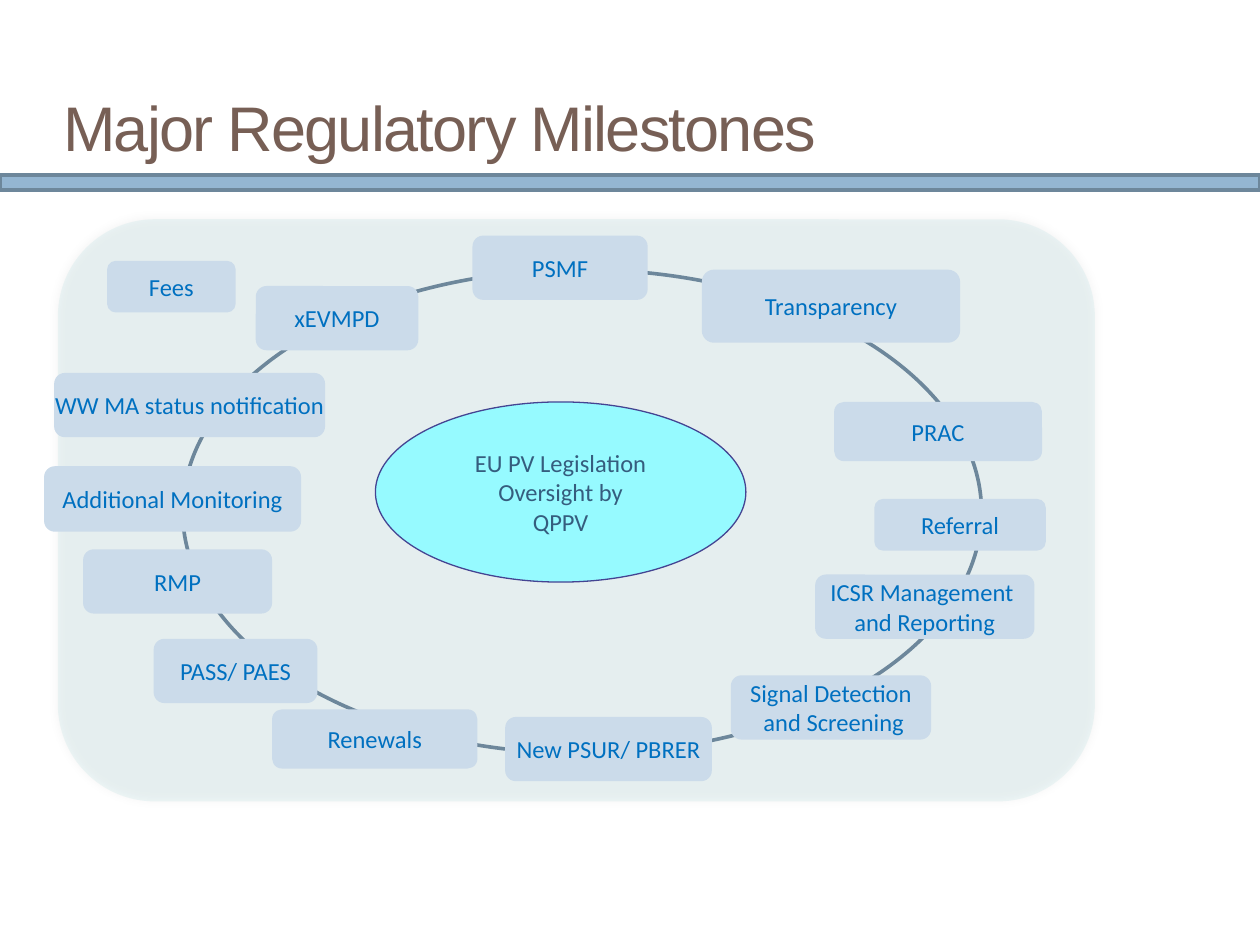
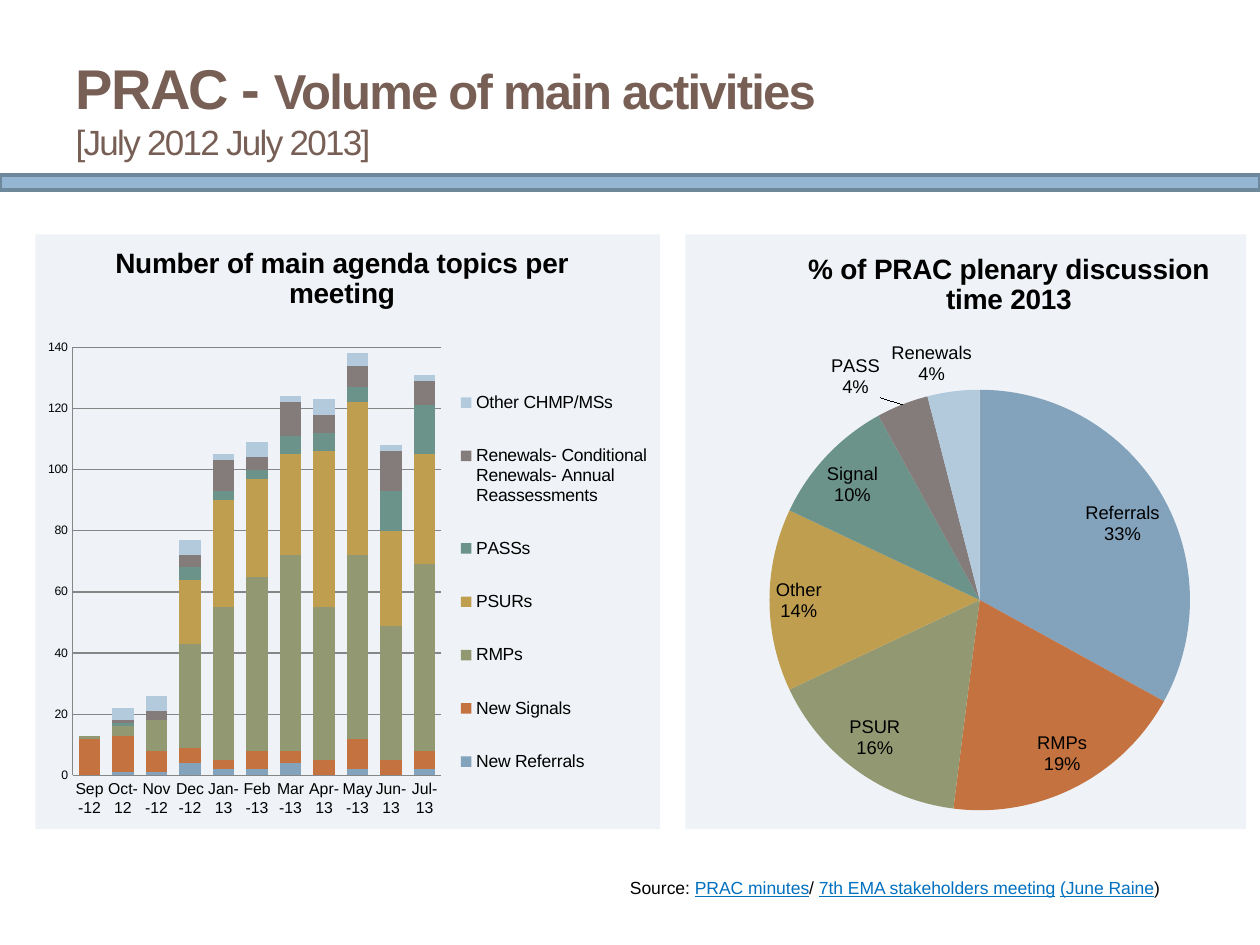
"""Build two slides on regulatory milestones and PRAC activity volumes."""
import pptx
import pptx.chart.data
import pptx.dml.color
import pptx.enum.chart
import pptx.enum.shapes
import pptx.enum.text
import pptx.oxml
import pptx.oxml.ns
import pptx.util

Inches = pptx.util.Inches
Pt = pptx.util.Pt
SHAPES = pptx.enum.shapes.MSO_SHAPE
ALIGN = pptx.enum.text.PP_ALIGN
ANCHOR = pptx.enum.text.MSO_ANCHOR

COLORS = {
    "band": "94B6D2", "band_line": "6D879B", "title": "775F55",
    "panel": "BBE0E3", "hub": "96FAFF", "hub_line": "444492",
    "hub_text": "355D7E", "milestone": "CBDBEA", "link": "0070C0",
    "black": "000000", "chart": "EFF3F7", "grid": "868686",
}
SERIES_COLORS = ["83A2BB", "C4723F", "929972", "BF9E50", "6C9389", "847B7B", "B3CADD"]

MILESTONES = [
    ("Transparency", 5.57, 2.14, 2.05, 0.58),
    ("PRAC", 6.62, 3.19, 1.65, 0.47),
    ("New PSUR/ PBRER", 4.01, 5.69, 1.64, 0.51),
    ("PASS/ PAES", 1.22, 5.07, 1.3, 0.51),
    ("PSMF", 3.75, 1.87, 1.39, 0.51),
    ("Renewals", 2.16, 5.63, 1.63, 0.47),
    ("RMP", 0.66, 4.36, 1.5, 0.51),
    ("Referral", 6.94, 3.96, 1.36, 0.41),
    ("Signal Detection\n and Screening", 5.8, 5.36, 1.59, 0.51),
    ("xEVMPD", 2.03, 2.27, 1.29, 0.51),
    ("Additional Monitoring", 0.35, 3.7, 2.04, 0.52),
    ("ICSR Management \nand Reporting", 6.47, 4.56, 1.74, 0.51),
    ("Fees", 0.85, 2.07, 1.02, 0.41),
    ("WW MA status notification", 0.43, 2.96, 2.15, 0.51),
]

MEETINGS = ["Sep-12", "Oct-12", "Nov-12", "Dec-12", "Jan-13", "Feb-13",
            "Mar-13", "Apr-13", "May-13", "Jun-13", "Jul-13"]
AGENDA_TOPICS = {
    "New Referrals": [0, 1, 1, 4, 2, 2, 4, 0, 2, 0, 2],
    "New Signals": [12, 12, 7, 5, 3, 6, 4, 5, 10, 5, 6],
    "RMPs": [1, 3, 10, 34, 50, 57, 64, 50, 60, 44, 61],
    "PSURs": [0, 0, 0, 21, 35, 32, 33, 51, 50, 31, 36],
    "PASSs": [0, 1, 0, 4, 3, 3, 6, 6, 5, 13, 16],
    "Renewals- Conditional Renewals- Annual Reassessments":
        [0, 1, 3, 4, 10, 4, 11, 6, 7, 13, 8],
    "Other CHMP/MSs": [0, 4, 5, 5, 2, 5, 2, 5, 4, 2, 2],
}
DISCUSSION_TOPICS = ["Referrals", "RMPs", "PSUR", "Other", "Signal", "PASS", "Renewals"]
DISCUSSION_SHARES = {"Series 1": [33, 19, 16, 14, 10, 4, 4]}


def rgb(value):
    """Return a colour from its name or its hex string."""
    return pptx.dml.color.RGBColor.from_string(COLORS.get(value, value))


def xml(markup):
    """Parse markup that uses the drawing and chart prefixes."""
    tag, rest = markup[:-1].split(">", 1) if ">" in markup[:-1] else (markup[:-2], None)
    names = pptx.oxml.ns.nsdecls("a", "c")
    return pptx.oxml.parse_xml(f"{tag} {names}/>" if rest is None else f"{tag} {names}>{rest}>")


def add_span(para, text, size=14, font="Arial", color="black", bold=False,
             underline=False, spacing=0):
    """Add one formatted run of text to a paragraph."""
    span = para.add_run()
    span.text = text
    span.font.size = Pt(size)
    span.font.name = font
    span.font.bold = bold
    span.font.underline = underline
    span.font.color.rgb = rgb(color)
    if spacing:
        span._r.get_or_add_rPr().set("spc", str(spacing * 100))


def add_box(slide, kind, place, fill=None, line=None, width=0.75):
    """Add a preset shape with plain fill and outline."""
    box = slide.shapes.add_shape(kind, *map(Inches, place))
    box.shadow.inherit = False
    if fill:
        box.fill.solid()
        box.fill.fore_color.rgb = rgb(fill)
    else:
        box.fill.background()
    if line:
        box.line.color.rgb = rgb(line)
        box.line.width = Pt(width)
    else:
        box.line.fill.background()
    return box


def add_label(box, text, color):
    """Write centred lines into a shape."""
    frame = box.text_frame
    frame.word_wrap = False
    frame.vertical_anchor = ANCHOR.MIDDLE
    for index, line in enumerate(text.split("\n")):
        para = frame.add_paragraph() if index else frame.paragraphs[0]
        para.alignment = ALIGN.CENTER
        add_span(para, line, font="Calibri", color=color)


def add_band(deck, layout):
    """Put the blue band on the layout that the slides share."""
    slide = deck.slides[0]
    band = add_box(slide, SHAPES.RECTANGLE, (0, 1.39, 10, 0.12), "band", "band_line", 2.08)
    layout.shapes._spTree.insert(2, band._element)


def set_title(slide, place, lines):
    """Place the title and write its lines of (text, size, bold) spans."""
    title = slide.shapes.title
    title.left, title.top, title.width, title.height = map(Inches, place)
    title.text_frame.auto_size = pptx.enum.text.MSO_AUTO_SIZE.NONE
    title.text_frame.vertical_anchor = ANCHOR.MIDDLE
    para = title.text_frame.paragraphs[0]
    para.alignment = ALIGN.LEFT
    for index, line in enumerate(lines):
        if index:
            para.add_line_break()
        for text, size, bold in line:
            add_span(para, text, size=size, bold=bold, color="title", spacing=-1)


def add_panel(slide):
    """Add the translucent panel with its soft shadow."""
    panel = add_box(slide, SHAPES.ROUNDED_RECTANGLE, (0.46, 1.74, 8.23, 4.62), "panel")
    properties = panel._element.spPr
    fill = properties.find(pptx.oxml.ns.qn("a:solidFill"))
    fill[0].append(xml('<a:alpha val="24000"/>'))
    effects = properties.find(pptx.oxml.ns.qn("a:effectLst"))
    effects.append(xml(
        '<a:outerShdw blurRad="76200" dist="0" dir="18900000">'
        '<a:srgbClr val="000000"><a:alpha val="20000"/></a:srgbClr></a:outerShdw>'))


def set_layout(element, index, x, y, w=None, h=None, inner=False):
    """Give a chart part a manual layout in fractions of the chart."""
    for old in element.findall(pptx.oxml.ns.qn("c:layout")):
        element.remove(old)
    target = '<c:layoutTarget val="inner"/>' if inner else ""
    modes = '<c:xMode val="edge"/><c:yMode val="edge"/>'
    sizes = [("x", x), ("y", y), ("w", w), ("h", h)]
    values = "".join(f'<c:{key} val="{value}"/>' for key, value in sizes if value is not None)
    element.insert(index, xml(
        f"<c:layout><c:manualLayout>{target}{modes}{values}</c:manualLayout></c:layout>"))


def add_chart(slide, kind, place, categories, series, title, title_at, plot_at):
    """Add a chart with its title, background and plot position."""
    data = pptx.chart.data.CategoryChartData()
    data.categories = categories
    for name, values in series.items():
        data.add_series(name, values)
    chart = slide.shapes.add_chart(kind, *map(Inches, place), data).chart
    chart.font.size = Pt(14)
    chart.font.name = "Arial"
    chart.font.color.rgb = rgb("black")
    chart.has_title = True
    add_span(chart.chart_title.text_frame.paragraphs[0], title, size=16, bold=True)
    set_layout(chart.chart_title._element, 1, *title_at)
    space = chart._chartSpace
    set_layout(space.chart.plotArea, 0, *plot_at, inner=True)
    space.chart.addnext(xml(
        f'<c:spPr><a:solidFill><a:srgbClr val="{COLORS["chart"]}"/></a:solidFill>'
        "<a:ln><a:noFill/></a:ln></c:spPr>"))
    return chart


def paint(parts):
    """Fill series or points with the chart colours in order."""
    for part, color in zip(parts, SERIES_COLORS):
        part.format.fill.solid()
        part.format.fill.fore_color.rgb = rgb(color)


def add_agenda_chart(slide):
    """Add the stacked columns of agenda topics."""
    chart = add_chart(
        slide, pptx.enum.chart.XL_CHART_TYPE.COLUMN_STACKED, (0.28, 1.86, 4.96, 4.72),
        MEETINGS, AGENDA_TOPICS, "Number of main agenda topics per meeting",
        (0.12, 0.01), (0.06, 0.19, 0.59, 0.72))
    plot = chart.plots[0]
    plot.gap_width = 55
    plot.overlap = 100
    paint(plot.series)
    for axis, size in ((chart.category_axis, 9), (chart.value_axis, 7)):
        axis.major_tick_mark = pptx.enum.chart.XL_TICK_MARK.NONE
        axis.minor_tick_mark = pptx.enum.chart.XL_TICK_MARK.NONE
        axis.tick_labels.font.size = Pt(size)
        axis.format.line.color.rgb = rgb("grid")
    chart.category_axis._element.txPr.bodyPr.set("rot", "0")
    values = chart.value_axis
    values.minimum_scale, values.maximum_scale, values.major_unit = 0, 140, 20
    values.major_gridlines.format.line.color.rgb = rgb("grid")
    chart.has_legend = True
    chart.legend.position = pptx.enum.chart.XL_LEGEND_POSITION.RIGHT
    chart.legend.include_in_layout = False
    chart.legend.font.size = Pt(10)
    set_layout(chart.legend._element, 1, 0.67, 0.21, 0.32, 0.75)


def add_discussion_chart(slide):
    """Add the pie of plenary discussion time."""
    chart = add_chart(
        slide, pptx.enum.chart.XL_CHART_TYPE.PIE, (5.44, 1.86, 4.45, 4.72),
        DISCUSSION_TOPICS, DISCUSSION_SHARES, "% of PRAC plenary discussion time 2013",
        (0.21, 0.02), (0.15, 0.26, 0.75, 0.71))
    chart.has_legend = False
    plot = chart.plots[0]
    paint([plot.series[0].points[index] for index in range(len(DISCUSSION_TOPICS))])
    plot.has_data_labels = True
    labels = plot.data_labels
    labels.show_value = False
    labels.show_category_name = True
    labels.show_percentage = True
    labels.number_format = "0%"
    labels.number_format_is_linked = False
    labels.position = pptx.enum.chart.XL_LABEL_POSITION.BEST_FIT
    labels.font.size = Pt(10.5)
    labels.font.color.rgb = rgb("black")


def add_source(slide):
    """Add the source line under the charts."""
    box = slide.shapes.add_textbox(Inches(5), Inches(6.96), Inches(5.23), Inches(0.36))
    frame = box.text_frame
    frame.word_wrap = False
    frame.margin_left = frame.margin_top = frame.margin_right = frame.margin_bottom = 0
    spans = ["Source: ", "PRAC minutes", "/ ", "7th EMA stakeholders meeting", " ",
             "(June Raine", ")"]
    for index, text in enumerate(spans):
        linked = index % 2 == 1
        add_span(frame.paragraphs[0], text, size=10,
                 color="link" if linked else "black", underline=linked)


def build_milestones(slide):
    """Fill the slide with the ring of milestones."""
    set_title(slide, (0.4, 0.57, 9.1, 0.87), [[("Major Regulatory Milestones", 36, False)]])
    add_panel(slide)
    add_box(slide, SHAPES.OVAL, (1.45, 2.14, 6.34, 3.84), line="band_line", width=2.08)
    hub = add_box(slide, SHAPES.OVAL, (2.98, 3.19, 2.94, 1.43), "hub", "hub_line")
    add_label(hub, "EU PV Legislation\nOversight by\nQPPV", "hub_text")
    for text, *place in MILESTONES:
        add_label(add_box(slide, SHAPES.ROUNDED_RECTANGLE, place, "milestone"), text, "link")


def build_activities(slide):
    """Fill the slide with the two charts and their source."""
    set_title(slide, (0.5, 0.32, 9, 1.08), [
        [("PRAC - ", 32, True), ("Volume of main activities", 28, True)],
        [("[July 2012 July 2013]", 20, False)]])
    add_source(slide)
    add_agenda_chart(slide)
    add_discussion_chart(slide)


def main():
    """Build and save the deck."""
    deck = pptx.Presentation()
    deck.slide_width, deck.slide_height = Inches(10), Inches(7.5)
    layout = deck.slide_layouts[5]
    milestones = deck.slides.add_slide(layout)
    add_band(deck, layout)
    build_milestones(milestones)
    build_activities(deck.slides.add_slide(layout))
    deck.save("out.pptx")


if __name__ == "__main__":
    main()
